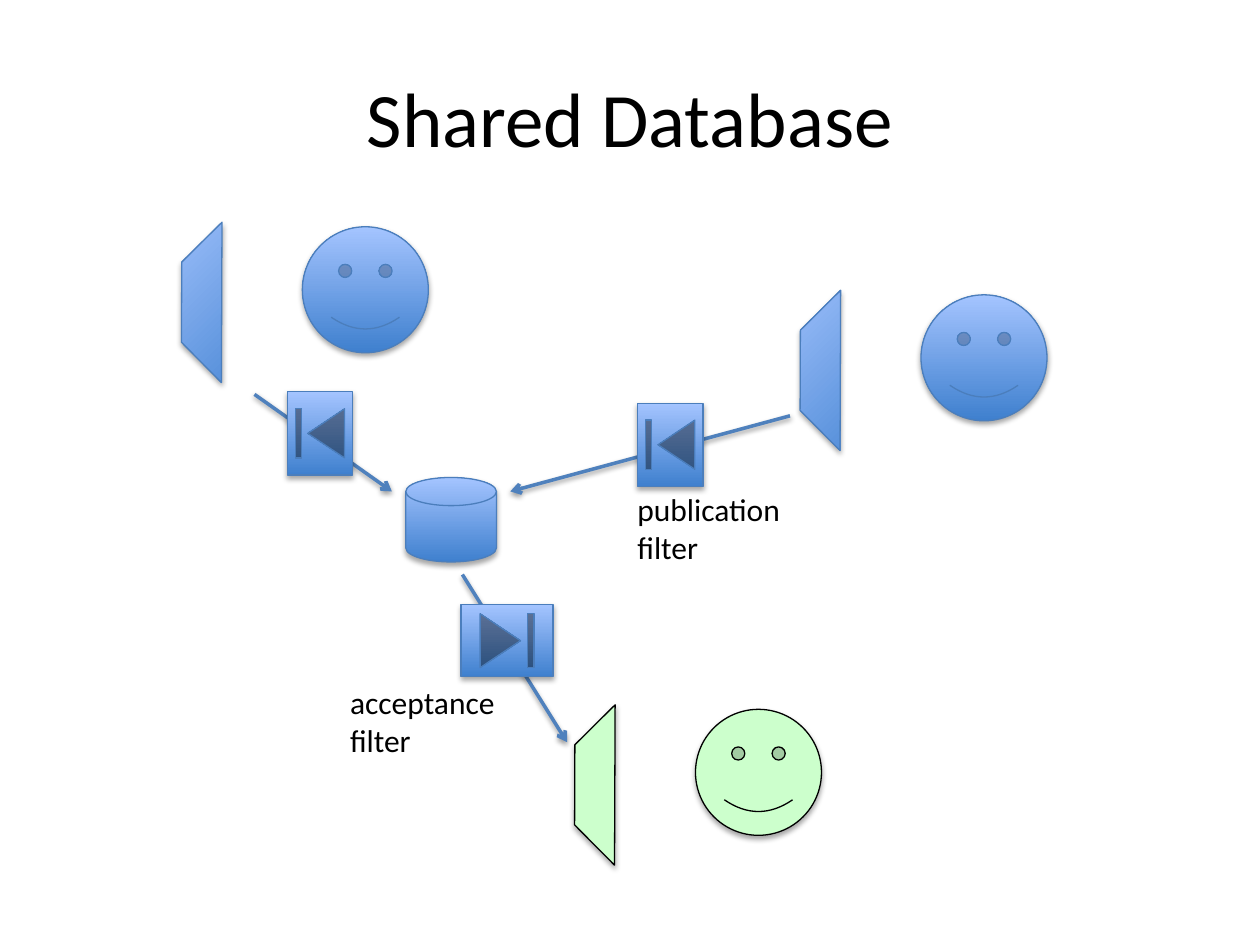
from lxml import etree
from pptx import Presentation
from pptx import util as u
from pptx.dml.color import RGBColor
from pptx.enum import shapes, text
from pptx.oxml.ns import qn

PX = 9144  # EMU in one px, 100 px to the inch
SHAPE = shapes.MSO_SHAPE
BLUE_LOW, BLUE_HIGH, BLUE_EDGE, ARROW = "3F80CE", "A4C4FF", "4B7EBC", "4F81BD"
GREEN, BLACK = "CCFFCC", "000000"


def px(*lengths):
    return [u.Emu(n * PX) for n in lengths]


def rgb(value):
    return RGBColor.from_string(value)


def add_shadow(spPr, distance, opacity):
    """Give the shape a soft black shadow falling straight down."""
    for old in spPr.findall(qn("a:effectLst")):
        spPr.remove(old)
    effects = etree.SubElement(spPr, qn("a:effectLst"))
    shadow = etree.SubElement(effects, qn("a:outerShdw"), blurRad=str(u.Pt(3.1)),
                              dist=str(u.Pt(distance)), dir="5400000", rotWithShape="0")
    color = etree.SubElement(shadow, qn("a:srgbClr"), val=BLACK)
    etree.SubElement(color, qn("a:alpha"), val=str(opacity * 1000))


def add_figure(s, kind, box, fill=None):
    """Add a preset shape: blue gradient by default, else flat with a black edge."""
    sp = s.shapes.add_shape(kind, *px(*box))
    if fill:
        sp.fill.solid()
        sp.fill.fore_color.rgb = rgb(fill)
    else:
        sp.fill.gradient()
        sp.fill.gradient_angle = 90
        for stop, color in zip(sp.fill.gradient_stops, (BLUE_LOW, BLUE_HIGH)):
            stop.color.rgb = rgb(color)
    sp.line.color.rgb = rgb(BLACK if fill else BLUE_EDGE)
    sp.line.width = u.Pt(0.75)
    sp.shadow.inherit = False
    add_shadow(sp._element.spPr, 1.8, 35)
    return sp


def add_user(s, x, y, fill=None):
    """Add a screen seen from the side and the face looking at it."""
    screen = add_figure(s, SHAPE.DIAGONAL_STRIPE, (x, y + 15, 90, 90), fill)
    screen.rotation = 315.2
    face = add_figure(s, SHAPE.SMILEY_FACE, (x + 109, y, 100, 100), fill)
    face.adjustments[0] = 0.047


def add_arrow(s, *ends):
    c = s.shapes.add_connector(shapes.MSO_CONNECTOR.STRAIGHT, *px(*ends))
    c.line.color.rgb = rgb(ARROW)
    c.line.width = u.Pt(2)
    etree.SubElement(c.line._get_or_add_ln(), qn("a:tailEnd"), type="arrow")
    add_shadow(c._element.spPr, 1.6, 38)


def add_text(s, box, lines, size, centred=False):
    tf = s.shapes.add_textbox(*px(*box)).text_frame
    tf.word_wrap = centred
    p = tf.paragraphs[0]
    if centred:
        tf.vertical_anchor = text.MSO_ANCHOR.MIDDLE
        p.alignment = text.PP_ALIGN.CENTER
    else:
        tf.auto_size = text.MSO_AUTO_SIZE.SHAPE_TO_FIT_TEXT
    for i, line in enumerate(lines):
        if i:
            p.add_line_break()
        r = p.add_run()
        r.text = line
        r.font.name = "Calibri"
        r.font.size = u.Pt(size)
        r.font.color.rgb = rgb(BLACK)


def add_shared_database(s):
    add_text(s, (50, 30, 900, 125), ["Shared Database"], 44, centred=True)

    add_figure(s, SHAPE.FLOWCHART_MAGNETIC_DISK, (322, 379, 72, 67))
    add_user(s, 131, 180)
    add_user(s, 622, 234)
    add_user(s, 443, 563, GREEN)

    add_arrow(s, 202, 313, 311, 390)
    add_arrow(s, 627, 330, 405, 390)
    add_arrow(s, 367, 456, 450, 589)

    for x, y in ((228, 311), (506, 320)):
        add_figure(s, SHAPE.ACTION_BUTTON_BEGINNING, (x, y, 52, 66))
    add_figure(s, SHAPE.ACTION_BUTTON_END, (366, 480, 73, 57))

    add_text(s, (496, 384, 135, 71), ["publication", "filter"], 18)
    add_text(s, (268, 537, 137, 71), ["acceptance", "filter"], 18)


def main():
    prs = Presentation()
    prs.slide_width, prs.slide_height = px(1000, 750)
    add_shared_database(prs.slides.add_slide(prs.slide_layouts[6]))
    prs.save("out.pptx")


if __name__ == "__main__":
    main()
